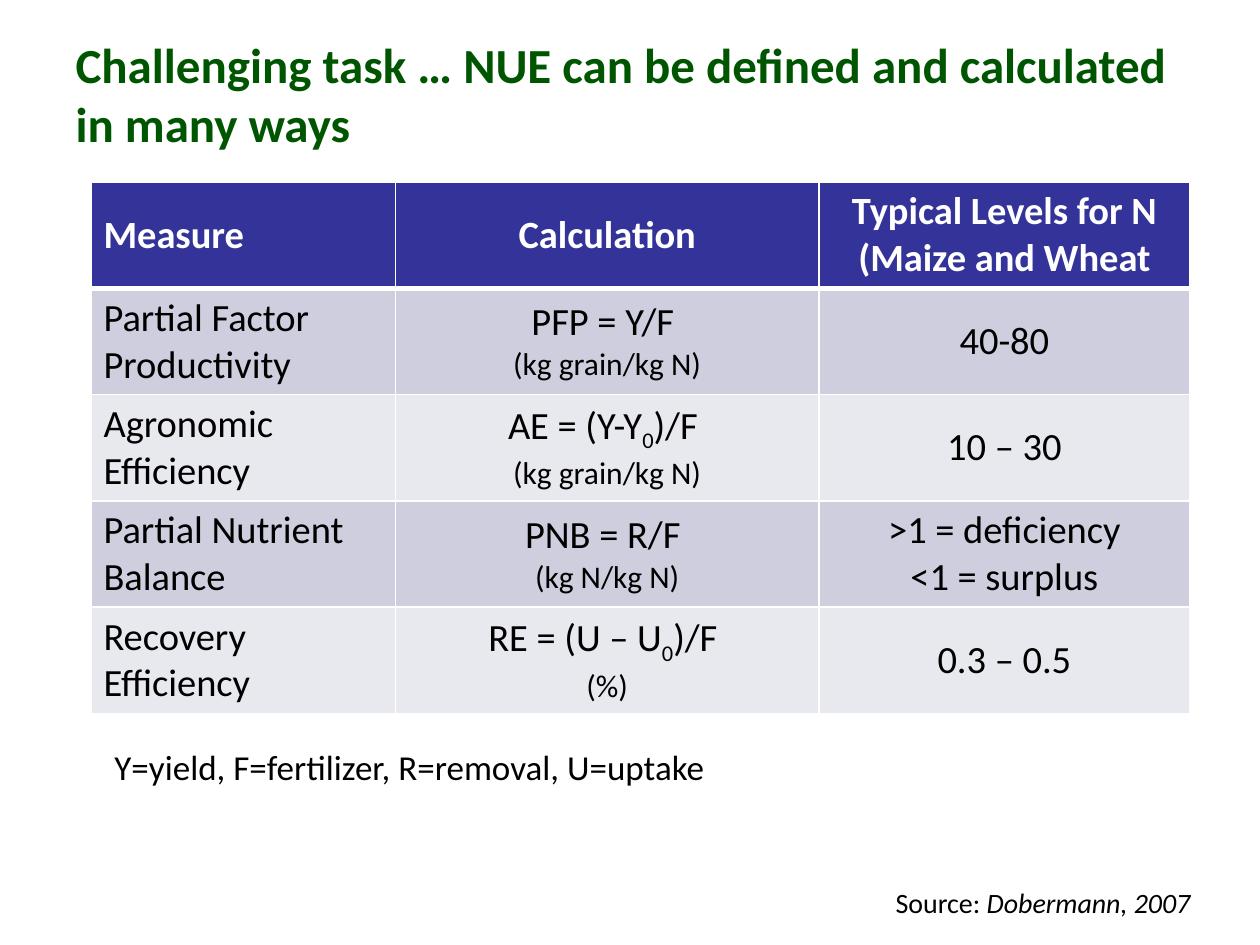
"""Build a slide that compares measures of nutrient use efficiency."""
from lxml import etree
from pptx import Presentation
from pptx import util as u
from pptx.dml.color import RGBColor
from pptx.enum import text
from pptx.oxml import ns

COLORS = {"title": "005500", "header": "333399", "band": "CECEDE",
          "light": "E8E8EF", "white": "FFFFFF", "black": "000000"}
FONT = "Calibri"
SUB = ("0", {"sub": True})
LEFT, CENTER = text.PP_ALIGN.LEFT, text.PP_ALIGN.CENTER
COL_WIDTHS = (174, 242, 212)
ROW_HEIGHT = 60
HEADERS = ("Measure", "Calculation", "Typical Levels for N (Maize and Wheat")
MEASURES = (
    ("Partial Factor Productivity", ["PFP = Y/F "], "(kg grain/kg N)", ["40-80"]),
    ("Agronomic Efficiency", ["AE = (Y-Y", SUB, ")/F "], "(kg grain/kg N)", ["10 – 30"]),
    ("Partial Nutrient Balance", ["PNB = R/F "], "(kg N/kg N)",
     [">1 = deficiency", "<1 = surplus"]),
    ("Recovery Efficiency", ["RE = (U – U", SUB, ")/F "], "(%)", ["0.3 – 0.5"]),
)


def add_run(p, content, size=22, color="black", bold=False, italic=False, sub=False):
    r = p.add_run()
    r.text = content
    r.font.name, r.font.size = FONT, u.Pt(size)
    r.font.bold, r.font.italic = bold, italic
    r.font.color.rgb = RGBColor.from_string(COLORS[color])
    if sub:
        r.font._element.set("baseline", "-25000")


def add_lines(tf, lines, align=LEFT, **fmt):
    """Write each line, a list of strings or (string, format) pairs, as a paragraph."""
    for i, line in enumerate(lines):
        p = tf.add_paragraph() if i else tf.paragraphs[0]
        p.alignment = align
        for part in line:
            content, extra = (part, {}) if isinstance(part, str) else part
            add_run(p, content, **{**fmt, **extra})


def place(s, left, top, width, height):
    s.left, s.top, s.width, s.height = map(u.Pt, (left, top, width, height))


def add_title(s, content):
    sp = s.shapes.title
    place(sp, 36, 8.6, 648, 90)
    tf = sp.text_frame
    tf.auto_size = text.MSO_AUTO_SIZE.NONE
    tf.vertical_anchor = text.MSO_ANCHOR.MIDDLE
    add_lines(tf, [[content]], size=28, color="title", bold=True)


def add_label(s, box, line, size):
    sp = s.shapes.add_textbox(*map(u.Pt, box))
    sp.text_frame.word_wrap = True
    add_lines(sp.text_frame, [line], size=size)


def set_borders(cell, **widths):
    tc_pr = cell._tc.get_or_add_tcPr()
    for side in "LRTB":
        ln = etree.SubElement(tc_pr, ns.qn(f"a:ln{side}"), w=str(u.Pt(widths.get(side, 1))))
        fill = etree.SubElement(ln, ns.qn("a:solidFill"))
        etree.SubElement(fill, ns.qn("a:srgbClr"), val=COLORS["white"])


def fill_cell(cell, lines, fill, borders, **fmt):
    set_borders(cell, **borders)
    cell.fill.solid()
    cell.fill.fore_color.rgb = RGBColor.from_string(COLORS[fill])
    cell.vertical_anchor = text.MSO_ANCHOR.MIDDLE
    add_lines(cell.text_frame, lines, **fmt)


def add_measures(s):
    rows = [[[[h]] for h in HEADERS]]
    for name, formula, unit, levels in MEASURES:
        rows.append([[[name]], [formula, [(unit, {"size": 18})]], [[v] for v in levels]])
    box = (52, 104, sum(COL_WIDTHS), ROW_HEIGHT * len(rows))
    table = s.shapes.add_table(len(rows), len(COL_WIDTHS), *map(u.Pt, box)).table
    for column, width in zip(table.columns, COL_WIDTHS):
        column.width = u.Pt(width)
    for i, row in enumerate(rows):
        table.rows[i].height = u.Pt(ROW_HEIGHT)
        fill = ("light", "band")[i % 2] if i else "header"
        borders = {0: {"B": 3}, 1: {"T": 3}}.get(i, {})
        for j, lines in enumerate(row):
            fill_cell(table.cell(i, j), lines, fill, borders, align=CENTER if j else LEFT,
                      color="black" if i else "white", bold=i == 0)


def main():
    prs = Presentation()
    prs.slide_width, prs.slide_height = u.Pt(720), u.Pt(540)
    s = prs.slides.add_slide(prs.slide_layouts[5])
    add_title(s, "Challenging task … NUE can be defined and calculated in many ways")
    add_measures(s)
    add_label(s, (58.3, 422.6, 358.6, 31.7), ["Y=yield, F=fertilizer, R=removal, U=uptake"], 20)
    add_label(s, (504.7, 502.6, 188.6, 26.6),
              ["Source: ", ("Dobermann, 2007", {"italic": True})], 16)
    prs.save("out.pptx")


if __name__ == "__main__":
    main()
